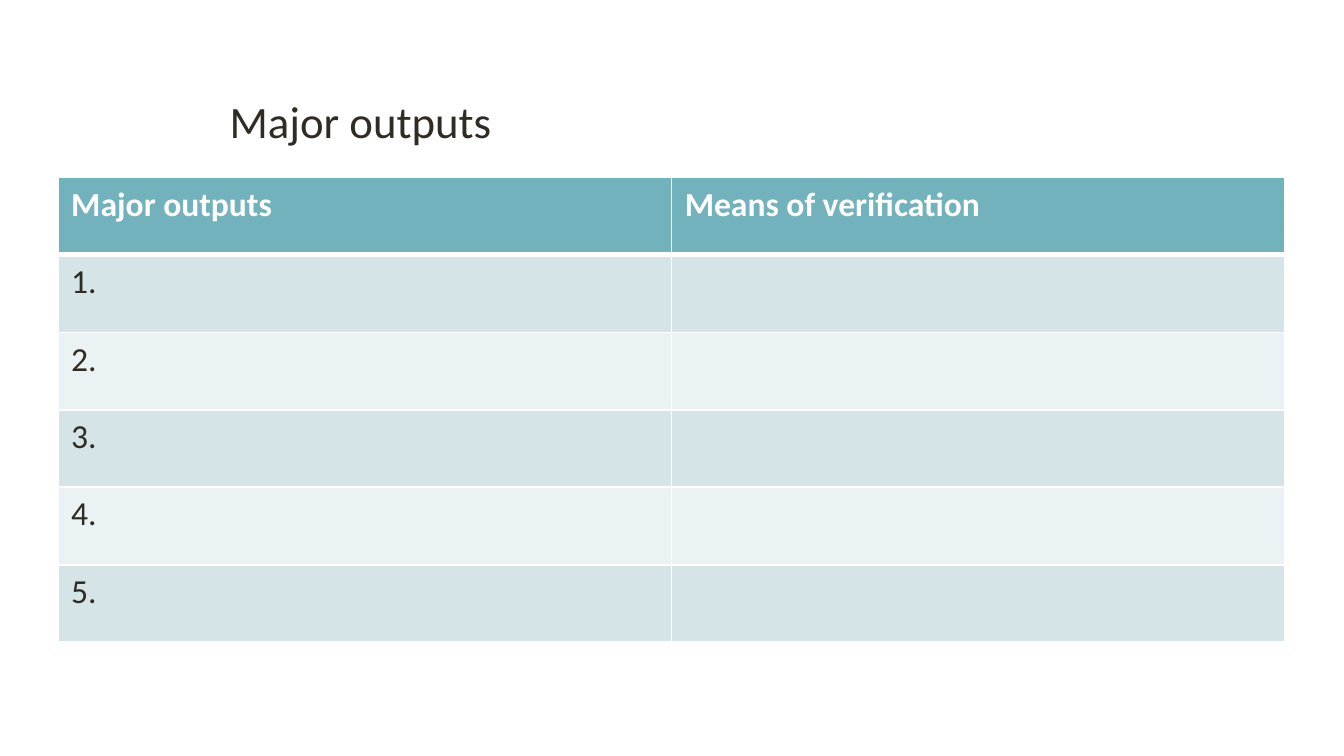
import pptx
import pptx.util
import pptx.dml.color
import pptx.enum.text
import pptx.oxml.ns
from lxml import etree

Inches = pptx.util.Inches
Pt = pptx.util.Pt
FONT = "Calibri"
COLORS = {
    "text": "302C24",
    "white": "FFFFFF",
    "header": "71B2BC",
    "band_dark": "D5E4E7",
    "band_light": "EBF2F3",
}
HEADERS = ["Major outputs", "Means of verification"]
OUTPUT_COUNT = 5


def rgb(name):
    return pptx.dml.color.RGBColor.from_string(COLORS[name])


def format_runs(p, size, color, bold=False):
    for r in p.runs:
        r.font.name = FONT
        r.font.size = Pt(size)
        r.font.bold = bold
        r.font.color.rgb = rgb(color)


def add_title(s, text):
    sp = s.shapes.add_textbox(Inches(1.61), Inches(0.69), Inches(7.62), Inches(0.63))
    tf = sp.text_frame
    tf.word_wrap = True
    tf.vertical_anchor = pptx.enum.text.MSO_ANCHOR.TOP
    tf.text = text
    p = tf.paragraphs[0]
    p.line_spacing = 0.9
    format_runs(p, 24, "text")


def set_borders(cell, top, bottom):
    qn = pptx.oxml.ns.qn
    tc_pr = cell._tc.get_or_add_tcPr()
    widths = {"a:lnL": 1, "a:lnR": 1, "a:lnT": top, "a:lnB": bottom}
    for i, (tag, width) in enumerate(widths.items()):
        ln = etree.Element(qn(tag), w=str(Pt(width)))
        fill = etree.SubElement(ln, qn("a:solidFill"))
        etree.SubElement(fill, qn("a:srgbClr"), val=COLORS["white"])
        tc_pr.insert(i, ln)


def fill_cell(cell, text, row):
    header = row == 0
    band = "band_dark" if row % 2 else "band_light"
    cell.fill.solid()
    cell.fill.fore_color.rgb = rgb("header" if header else band)
    set_borders(cell, 3 if row == 1 else 1, 3 if header else 1)
    if text:
        cell.text_frame.text = text
        format_runs(cell.text_frame.paragraphs[0], 18, "white" if header else "text", header)


def add_outputs_table(s):
    rows = [HEADERS] + [[f"{n}.", ""] for n in range(1, OUTPUT_COUNT + 1)]
    table = s.shapes.add_table(
        len(rows), len(HEADERS), Inches(0.43), Inches(1.32), Inches(9.13), Inches(3.46)
    ).table
    for i, texts in enumerate(rows):
        for j, text in enumerate(texts):
            fill_cell(table.cell(i, j), text, i)


def main():
    prs = pptx.Presentation()
    prs.slide_width = Inches(10)
    prs.slide_height = prs.slide_width * 9 // 16
    s = prs.slides.add_slide(prs.slide_layouts[6])
    add_title(s, "Major outputs")
    add_outputs_table(s)
    prs.save("out.pptx")


if __name__ == "__main__":
    main()
